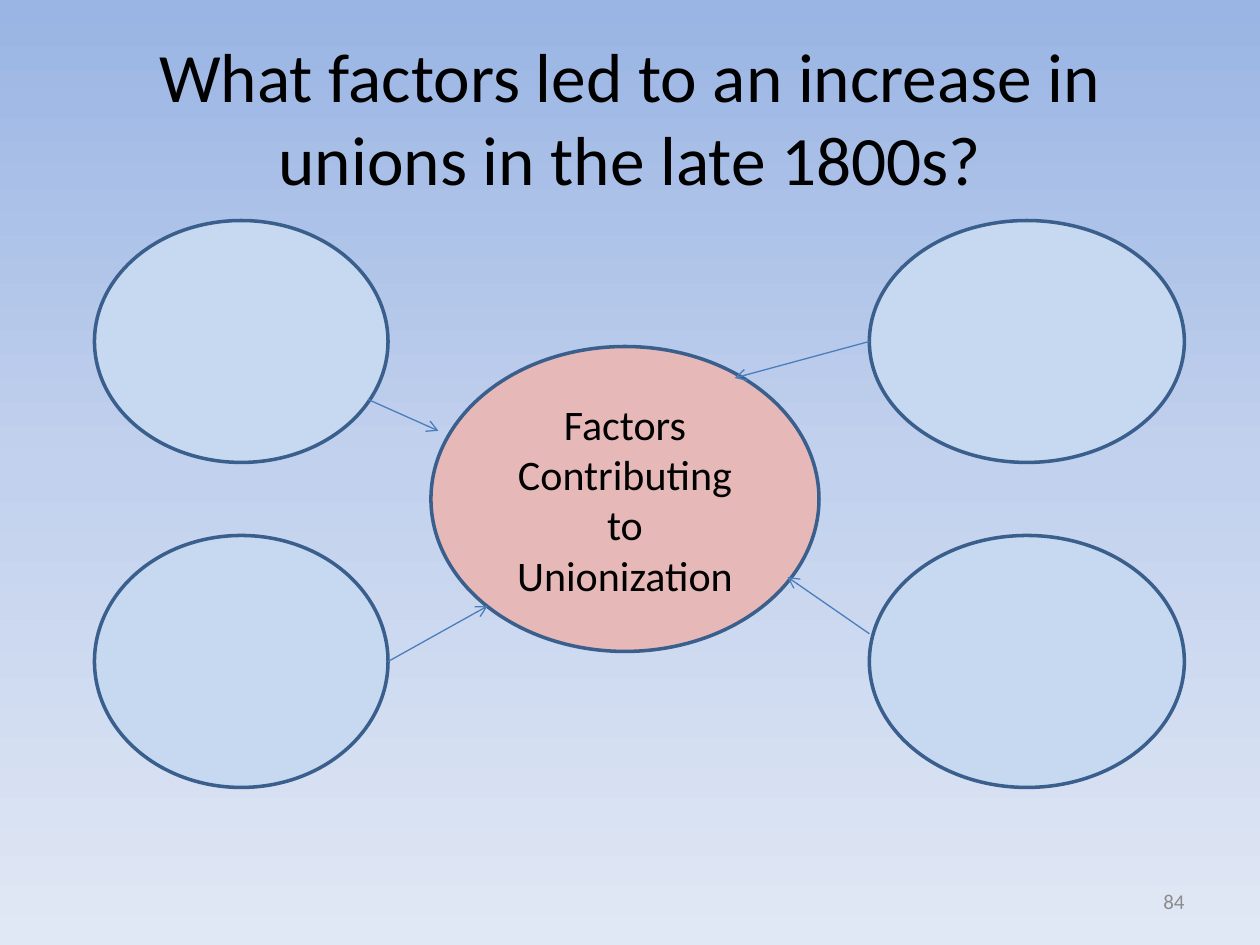
from copy import deepcopy
from dataclasses import dataclass

from pptx import Presentation
from pptx.dml.color import RGBColor
from pptx.enum.shapes import MSO_CONNECTOR as Connector, MSO_SHAPE as Preset
from pptx.enum.text import MSO_ANCHOR as Anchor, MSO_AUTO_SIZE as AutoSize, PP_ALIGN as Align
from pptx.oxml.ns import qn
from pptx.oxml.xmlchemy import OxmlElement
from pptx.slide import Slide
from pptx.text.text import TextFrame
from pptx.util import Inches, Pt


@dataclass(frozen=True)
class Theme:
    font: str = "Calibri"
    ink: str = "000000"
    muted: str = "8C8C8C"
    center_fill: str = "E6B9B8"
    factor_fill: str = "C6D9F1"
    outline: str = "3A5F8C"
    arrow: str = "4B7EBC"
    background: tuple = ((0, "9AB5E4"), (0.5, "C2D1ED"), (1, "E1E8F5"))
    title_size: float = 39.6
    center_size: float = 24
    number_size: float = 12
    outline_width: float = 2
    arrow_width: float = 0.75


@dataclass(frozen=True)
class Bubble:
    left: float
    top: float
    width: float
    height: float
    fill: str
    text: str = ""


@dataclass(frozen=True)
class Arrow:
    start: tuple[float, float]
    end: tuple[float, float]


THEME = Theme()
COLUMNS = ((6.9, 2.5), (0.75, 2.33))
ROWS = ((1.75, 1.92), (4.25, 2))
BUBBLES = [
    Bubble(3.42, 2.75, 3.08, 2.42, THEME.center_fill, "Factors Contributing to Unionization"),
    *(
        Bubble(left, top, width, height, THEME.factor_fill)
        for left, width in COLUMNS
        for top, height in ROWS
    ),
]
ARROWS = [
    Arrow((2.92, 3.17), (3.48, 3.42)),
    Arrow((3.08, 5.25), (3.87, 4.81)),
    Arrow((6.9, 2.71), (5.83, 3)),
    Arrow((6.9, 5.03), (6.25, 4.58)),
]


def rgb(value: str) -> RGBColor:
    return RGBColor.from_string(value)


def write(frame: TextFrame, text: str, size: float, color: str, align: Align) -> None:
    frame.word_wrap = True
    frame.auto_size = AutoSize.NONE
    frame.vertical_anchor = Anchor.MIDDLE
    para = frame.paragraphs[0]
    para.text = text
    para.alignment = align
    para.font.name = THEME.font
    para.font.size = Pt(size)
    para.font.color.rgb = rgb(color)


def paint_background(page: Slide) -> None:
    fill = page.background.fill
    fill.gradient()
    fill.gradient_angle = 270
    stop_list = next(page.element.iter(qn("a:gsLst")))
    stop_list.append(deepcopy(stop_list[0]))
    for stop, (position, color) in zip(fill.gradient_stops, THEME.background):
        stop.position = position
        stop.color.rgb = rgb(color)


def add_title(page: Slide, text: str) -> None:
    title = page.shapes.title
    title.left, title.top = Inches(0.5), Inches(0.3)
    title.width, title.height = Inches(9), Inches(1.25)
    write(title.text_frame, text, THEME.title_size, THEME.ink, Align.CENTER)


def add_page_number(page: Slide, text: str) -> None:
    box = page.shapes.add_textbox(Inches(7.17), Inches(6.95), Inches(2.33), Inches(0.4))
    write(box.text_frame, text, THEME.number_size, THEME.muted, Align.RIGHT)


def add_bubble(page: Slide, bubble: Bubble) -> None:
    shape = page.shapes.add_shape(
        Preset.OVAL,
        Inches(bubble.left),
        Inches(bubble.top),
        Inches(bubble.width),
        Inches(bubble.height),
    )
    shape.shadow.inherit = False
    shape.fill.solid()
    shape.fill.fore_color.rgb = rgb(bubble.fill)
    shape.line.color.rgb = rgb(THEME.outline)
    shape.line.width = Pt(THEME.outline_width)
    if bubble.text:
        write(shape.text_frame, bubble.text, THEME.center_size, THEME.ink, Align.CENTER)


def add_arrow(page: Slide, arrow: Arrow) -> None:
    points = [Inches(value) for value in (*arrow.start, *arrow.end)]
    connector = page.shapes.add_connector(Connector.STRAIGHT, *points)
    connector.line.color.rgb = rgb(THEME.arrow)
    connector.line.width = Pt(THEME.arrow_width)
    head = OxmlElement("a:tailEnd")
    head.set("type", "arrow")
    connector.line._get_or_add_ln().append(head)
    connector.element.spPr.append(OxmlElement("a:effectLst"))


def main() -> None:
    deck = Presentation()
    deck.slide_width, deck.slide_height = Inches(10), Inches(7.5)
    page = deck.slides.add_slide(deck.slide_layouts[5])
    paint_background(page)
    add_title(page, "What factors led to an increase in unions in the late 1800s?")
    add_page_number(page, "84")
    for bubble in BUBBLES:
        add_bubble(page, bubble)
    for arrow in ARROWS:
        add_arrow(page, arrow)
    deck.save("out.pptx")


if __name__ == "__main__":
    main()
